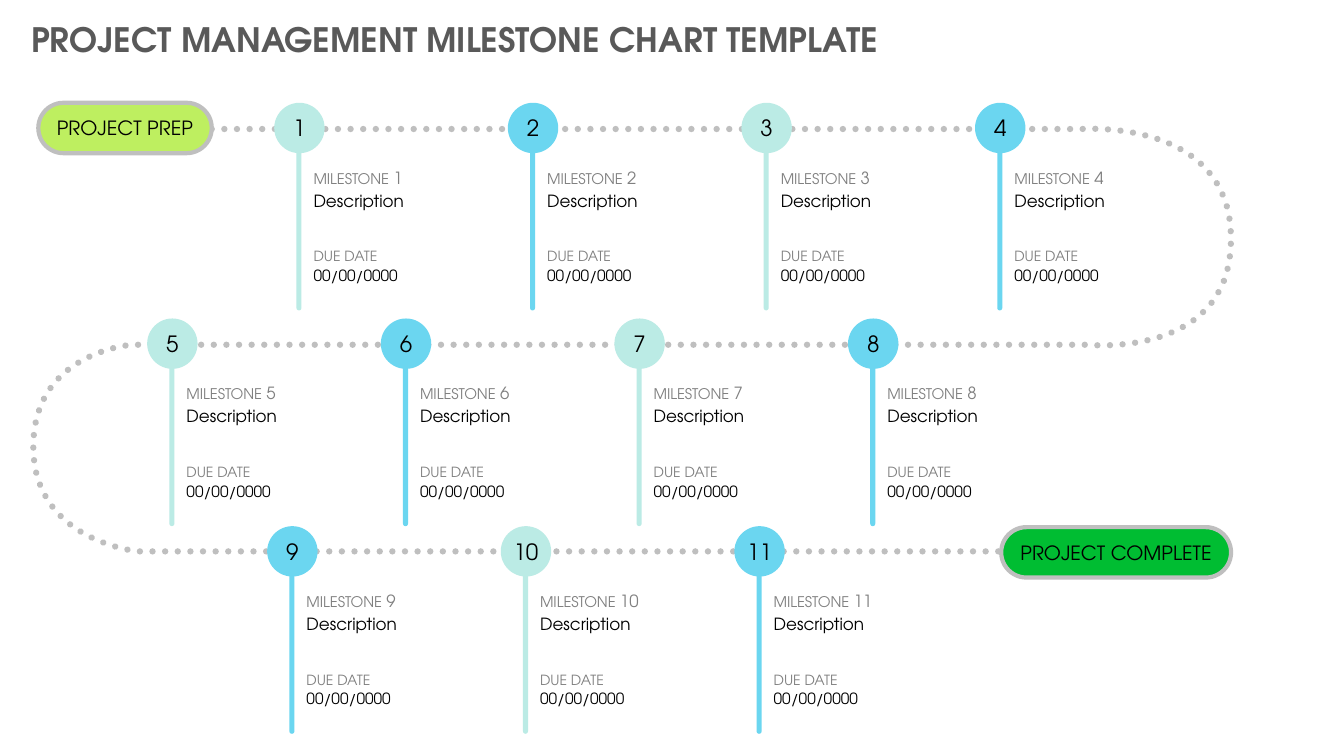
from pptx import Presentation, util as u
from pptx.dml.color import RGBColor
from pptx.enum import dml, shapes, text
from pptx.oxml.ns import qn

FONT = "TeX Gyre Adventor"
BLACK, LABEL_GREY, PATH_GREY = "000000", "808080", "BFBFBF"
TEAL, BLUE = "BBEBE5", "6BD6F0"
PITCH, DOT = 2.317, 0.5  # column step and circle diameter
CENTRED = {"alignment": text.PP_ALIGN.CENTER}

presentation = Presentation()
presentation.slide_width, presentation.slide_height = u.Inches(13.33), u.Inches(7.5)
slide = presentation.slides.add_slide(presentation.slide_layouts[6])


def write(shape, runs, frame_format=None, paragraph_format=None):
    """Fill a shape with one paragraph of (words, size, colour) runs."""
    frame = shape.text_frame
    frame_values = {"word_wrap": True, "margin_left": 0, "margin_top": 0,
                    "margin_right": 0, "margin_bottom": 0, **(frame_format or {})}
    for name, value in frame_values.items():
        setattr(frame, name, value)
    paragraph = frame.paragraphs[0]
    for name, value in (paragraph_format or {}).items():
        setattr(paragraph, name, value)
    for words, size, colour in runs:
        run = paragraph.add_run()
        run.text = words
        for name, value in {"name": FONT, "size": u.Pt(size)}.items():
            setattr(run.font, name, value)
        run.font.color.rgb = RGBColor.from_string(colour)
    return paragraph


def add_solid(parent, kind, box, fill, outline=None):
    """Add a flat filled shape; box is left, top, width, height in inches."""
    shape = parent.shapes.add_shape(kind, *map(u.Inches, box))
    shape.shadow.inherit = False
    shape.fill.solid()
    shape.fill.fore_color.rgb = RGBColor.from_string(fill)
    if kind == shapes.MSO_SHAPE.ROUNDED_RECTANGLE:
        shape.adjustments[0] = 0.5
    if outline:
        shape.line.color.rgb = RGBColor.from_string(outline)
        shape.line.width = u.Pt(3)
    else:
        shape.line.fill.background()
    return shape


# Title
title = slide.shapes.add_textbox(*map(u.Inches, (0.21, 0.14, 8.91, 0.5)))
inset = {"margin_left": u.Inches(0.1), "margin_right": u.Inches(0.1),
         "margin_top": u.Inches(0.05), "margin_bottom": u.Inches(0.05),
         "auto_size": text.MSO_AUTO_SIZE.SHAPE_TO_FIT_TEXT}
heading = write(title, [("PROJECT MANAGEMENT MILESTONE CHART TEMPLATE", 24, "595959")], inset)
heading.runs[0].font.bold = True

# Dotted path: straight runs joined by sampled Bezier bends
STEPS = 30
bends = [
    ((10.73, 1.28), (10.73, 1.28), (12.21, 1.17), (12.21, 2.37)),
    ((12.21, 2.37), (12.21, 3.57), (10.78, 3.42), (10.78, 3.42)),
    ((1.31, 3.42), (1.31, 3.42), (0.33, 3.49), (0.33, 4.43)),
    ((0.33, 4.43), (0.33, 5.37), (1.37, 5.47), (1.37, 5.47)),
]
route = []
for bend in bends:
    for step in range(STEPS + 1):
        t = step / STEPS
        weights = ((1 - t) ** 3, 3 * t * (1 - t) ** 2, 3 * t ** 2 * (1 - t), t ** 3)
        point = tuple(u.Inches(sum(w * p[axis] for w, p in zip(weights, bend)))
                      for axis in (0, 1))
        if not route or point != route[-1]:
            route.append(point)
route.append((u.Inches(10.28), u.Inches(5.47)))
builder = slide.shapes.build_freeform(u.Inches(2.1), u.Inches(1.28))
builder.add_line_segments(route, close=False)
path_shape = builder.convert_to_shape()
path_shape.shadow.inherit = False
path_shape.fill.background()
path_shape.line.color.rgb = RGBColor.from_string(PATH_GREY)
path_shape.line.width = u.Pt(4.5)
path_shape.line.dash_style = dml.MSO_LINE.ROUND_DOT
path_shape._element.spPr.find(qn("a:ln")).set("cap", "rnd")

# Start and finish badges
badges = [
    ("PROJECT PREP", (0.38, 1.02, 1.72, 0.5), "BEEF60"),
    ("PROJECT COMPLETE", (9.93, 5.23, 2.28, 0.5), "00BD32"),
]
middle = {"vertical_anchor": text.MSO_ANCHOR.MIDDLE}
for words, box, fill in badges:
    badge = add_solid(slide, shapes.MSO_SHAPE.ROUNDED_RECTANGLE, box, fill, PATH_GREY)
    write(badge, [(words, 14, BLACK)], middle, CENTRED)

# Milestones: left and top of the first circle, count, alternating colours
rows = [
    (2.72, 1.02, 4, (TEAL, BLUE)),
    (1.46, 3.16, 4, (TEAL, BLUE)),
    (2.65, 5.22, 3, (BLUE, TEAL)),
]
number = 0
for row_left, top, count, colours in rows:
    for column in range(count):
        number += 1
        left, colour = row_left + column * PITCH, colours[column % 2]
        group = slide.shapes.add_group_shape()
        group.name = f"Milestone {number}"
        add_solid(group, shapes.MSO_SHAPE.ROUNDED_RECTANGLE,
                  (left + 0.22, top + 0.19, 0.05, 1.87), colour)
        # Each line: drop below the circle's top, width, height, space after, runs
        lines = [
            (0.64, 1.17, 0.26, 0, [("MILESTONE", 10.5, LABEL_GREY), (" ", 11, LABEL_GREY),
                                   (str(number), 12, LABEL_GREY)]),
            (0.87, 1.37, 0.57, 0, [("Description", 12, BLACK)]),
            (1.44, 0.8, 0.2, 3, [("DUE DATE", 10, LABEL_GREY)]),
            (1.62, 0.9, 0.26, 0, [("00/00/0000", 11, BLACK)]),
        ]
        for drop, width, height, after, runs in lines:
            box = group.shapes.add_textbox(
                *map(u.Inches, (left + 0.39, top + drop, width, height)))
            write(box, runs, paragraph_format={"space_after": u.Pt(after)})
        circle = add_solid(group, shapes.MSO_SHAPE.OVAL, (left, top, DOT, DOT), colour)
        write(circle, [(str(number), 16, BLACK)], middle, CENTRED)

presentation.save("out.pptx")
